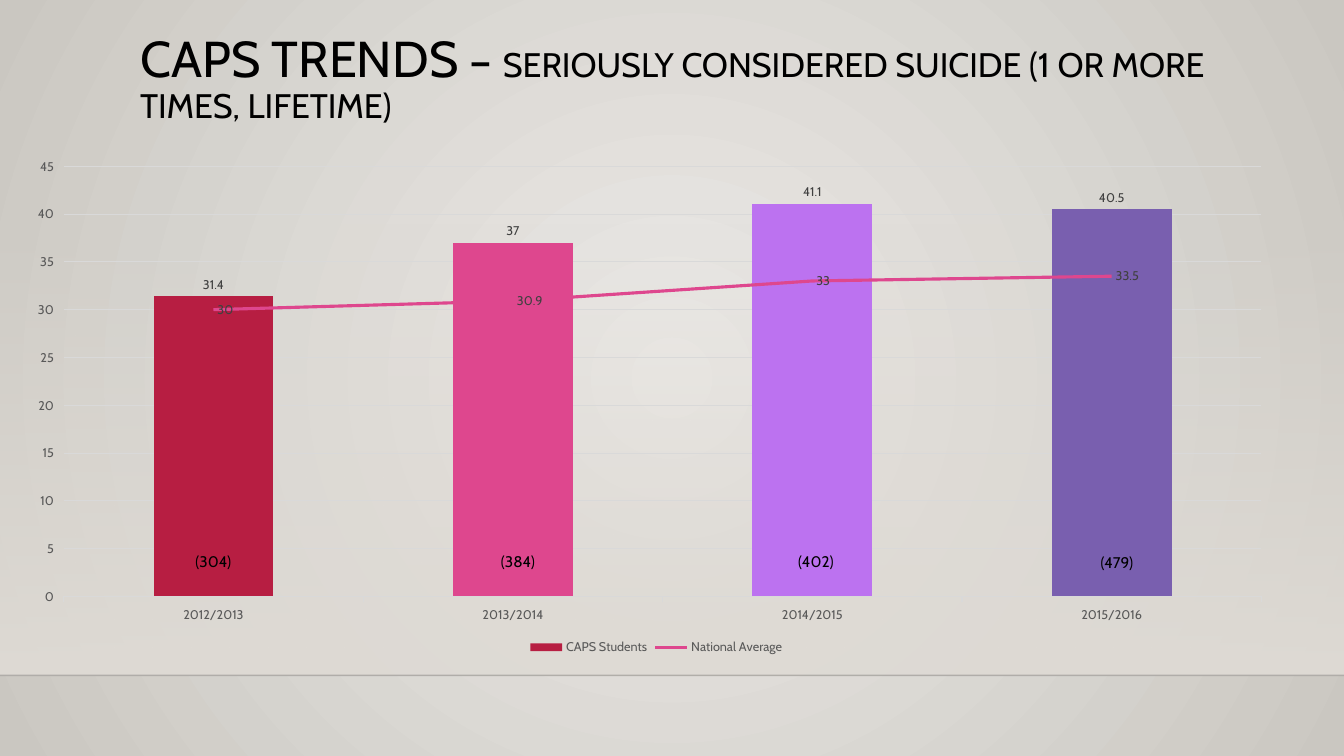
from dataclasses import dataclass

from lxml.etree import SubElement
from pptx import Presentation
from pptx.chart.chart import Chart
from pptx.chart.data import CategoryChartData
from pptx.chart.series import LineSeries
from pptx.dml.color import RGBColor
from pptx.enum.chart import XL_CHART_TYPE as ChartType
from pptx.enum.chart import XL_LABEL_POSITION as LabelPosition
from pptx.enum.chart import XL_LEGEND_POSITION as LegendPosition
from pptx.enum.chart import XL_MARKER_STYLE as MarkerStyle
from pptx.enum.shapes import MSO_CONNECTOR as Connector
from pptx.enum.shapes import MSO_SHAPE as Preset
from pptx.enum.text import MSO_ANCHOR as Anchor
from pptx.enum.text import MSO_AUTO_SIZE as AutoSize
from pptx.enum.text import PP_ALIGN as Align
from pptx.oxml.ns import qn
from pptx.slide import Slide
from pptx.text.text import Font
from pptx.util import Emu, Inches, Pt

CELL = Inches(0.1)  # side of one grid cell
COLUMNS, ROWS = 133.33, 75


@dataclass(frozen=True)
class Theme:
    font: str = "Cabin"
    ink: str = "000000"
    axis_text: str = "595959"
    label_text: str = "404040"
    rule: str = "D9D9D9"
    center: str = "ECEAE7"
    edge: str = "CAC7C1"
    band: str = "DFDBD5"
    horizon: str = "000001"
    bars: tuple[str, ...] = ("B71E42", "DE478E", "BC72F0", "795FAF")
    average: str = "DE478E"
    chart_size: float = 9
    count_size: float = 11


@dataclass(frozen=True)
class Place:
    """A box in grid columns and rows."""
    col: float
    row: float
    cols: float
    rows: float

    def box(self) -> tuple[Emu, ...]:
        return tuple(Emu(round(n * CELL)) for n in (self.col, self.row, self.cols, self.rows))


@dataclass(frozen=True)
class Stop:
    percent: int
    color: str
    opacity: int = 100


@dataclass(frozen=True)
class Year:
    name: str
    caps: float
    national: float
    count: str
    count_place: Place


THEME = Theme()
TITLE = (("CAPS TRENDS ", 36), ("– ", 32.4),
         ("SERIOUSLY CONSIDERED SUICIDE (1 OR MORE TIMES, LIFETIME)", 24.3))
YEARS = (
    Year("2012/2013", 31.4, 30, "(304)", Place(18.4, 54.3, 5.9, 2.9)),
    Year("2013/2014", 37, 30.9, "(384)", Place(48.7, 54.3, 5.5, 2.9)),
    Year("2014/2015", 41.1, 33, "(402)", Place(78.2, 54.3, 5.5, 2.9)),
    Year("2015/2016", 40.5, 33.5, "(479)", Place(108.2, 54.4, 5.9, 2.9)),
)


def rgb(color: str) -> RGBColor:
    return RGBColor.from_string(color)


def style(font: Font, size: float, color: str) -> None:
    font.name, font.size, font.bold = THEME.font, Pt(size), False
    font.color.rgb = rgb(color)


def add_color(parent, stop: Stop) -> None:
    color = SubElement(parent, qn("a:srgbClr"), val=stop.color)
    if stop.opacity < 100:
        SubElement(color, qn("a:alpha"), val=str(stop.opacity * 1000))


def set_gradient(owner, stops: tuple[Stop, ...], circular: bool) -> None:
    gradient = owner.find(".//" + qn("a:gradFill"))
    for child in list(gradient):
        gradient.remove(child)
    stop_list = SubElement(gradient, qn("a:gsLst"))
    for stop in stops:
        add_color(SubElement(stop_list, qn("a:gs"), pos=str(stop.percent * 1000)), stop)
    if circular:
        shade = SubElement(gradient, qn("a:path"), {"path": "circle"})
        SubElement(shade, qn("a:fillToRect"), dict.fromkeys("ltrb", "50000"))
    else:
        SubElement(gradient, qn("a:lin"), ang="5400000", scaled="0")


def draw_backdrop(slide: Slide) -> None:
    slide.background.fill.gradient()
    set_gradient(slide.background._cSld, (Stop(0, THEME.center), Stop(100, THEME.edge)), True)

    # Band that fades in towards the horizon
    band = slide.shapes.add_shape(Preset.RECTANGLE, *Place(0, 22.1, COLUMNS, 44.9).box())
    band.shadow.inherit = False
    band.line.fill.background()
    band.fill.gradient()
    set_gradient(band._element.spPr, (Stop(0, THEME.band, 0), Stop(100, THEME.band)), False)

    left, top, width, _ = Place(0, 67, COLUMNS, 0).box()
    horizon = slide.shapes.add_connector(Connector.STRAIGHT, left, top, left + width, top)
    horizon.line.width = Pt(1)
    horizon.line.fill.solid()
    horizon.line.color.rgb = rgb(THEME.horizon)
    tint = horizon._element.spPr.find(".//" + qn("a:srgbClr"))
    SubElement(tint, qn("a:alpha"), val="20000")
    SubElement(horizon._element.spPr, qn("a:effectLst"))


def split_off_line(chart: Chart) -> LineSeries:
    """Move the last column series to a line plot on the same axes."""
    columns = chart.plots[0]._element
    average = columns.findall(qn("c:ser"))[-1]
    invert = average.find(qn("c:invertIfNegative"))
    if invert is not None:
        average.remove(invert)
    lines = columns.makeelement(qn("c:lineChart"))
    columns.addnext(lines)
    SubElement(lines, qn("c:grouping"), val="standard")
    SubElement(lines, qn("c:varyColors"), val="0")
    lines.append(average)
    SubElement(lines, qn("c:marker"), val="1")
    for axis in columns.findall(qn("c:axId")):
        SubElement(lines, qn("c:axId"), val=axis.get("val"))
    return chart.plots[1].series[0]


def set_plot_area(chart: Chart, x: float, y: float, w: float, h: float) -> None:
    area = chart._chartSpace.chart.plotArea
    layout = area.find(qn("c:layout"))
    if layout is None:
        layout = area.makeelement(qn("c:layout"))
        area.insert(0, layout)
    manual = SubElement(layout, qn("c:manualLayout"))
    for tag, value in (("layoutTarget", "inner"), ("xMode", "edge"), ("yMode", "edge"),
                       ("x", x), ("y", y), ("w", w), ("h", h)):
        SubElement(manual, qn("c:" + tag), val=str(value))


def draw_chart(slide: Slide) -> None:
    data = CategoryChartData()
    data.categories = [year.name for year in YEARS]
    data.add_series("CAPS Students", [year.caps for year in YEARS])
    data.add_series("National Average", [year.national for year in YEARS])
    chart = slide.shapes.add_chart(
        ChartType.COLUMN_CLUSTERED, *Place(1.9, 15.3, 126.4, 50.1).box(), data).chart
    style(chart.font, 10, THEME.ink)
    chart.has_title = False
    average = split_off_line(chart)
    set_plot_area(chart, 0.035, 0.024, 0.94, 0.852)

    # Bars, one colour a year
    bars = chart.plots[0]
    bars.gap_width, bars.vary_by_categories = 150, False
    students = bars.series[0]
    students.format.fill.solid()
    students.format.fill.fore_color.rgb = rgb(THEME.bars[0])
    for index, color in enumerate(THEME.bars):
        fill = students.points[index].format.fill
        fill.solid()
        fill.fore_color.rgb = rgb(color)

    average.smooth = False
    average.marker.style = MarkerStyle.NONE
    average.format.line.width = Pt(2.25)
    average.format.line.color.rgb = rgb(THEME.average)

    for series, position in ((students, LabelPosition.OUTSIDE_END), (average, LabelPosition.RIGHT)):
        labels = series.data_labels
        labels.show_value, labels.position = True, position
        style(labels.font, THEME.chart_size, THEME.label_text)

    # Axes and legend
    years, percent = chart.category_axis, chart.value_axis
    percent.minimum_scale, percent.maximum_scale, percent.major_unit = 0, 45, 5
    percent.format.line.fill.background()
    for line in (years.format.line, percent.major_gridlines.format.line):
        line.width = Pt(0.75)
        line.color.rgb = rgb(THEME.rule)
    chart.has_legend = True
    chart.legend.position, chart.legend.include_in_layout = LegendPosition.BOTTOM, False
    for font in (years.tick_labels.font, percent.tick_labels.font, chart.legend.font):
        style(font, THEME.chart_size, THEME.axis_text)


def write_title(slide: Slide) -> None:
    title = slide.shapes.title
    title.left, title.top, title.width, title.height = Place(12.9, 2.9, 110.9, 9.9).box()
    frame = title.text_frame
    frame.auto_size, frame.word_wrap, frame.vertical_anchor = AutoSize.NONE, True, Anchor.TOP
    heading = frame.paragraphs[0]
    heading.alignment, heading.line_spacing = Align.LEFT, 0.9
    for text, size in TITLE:
        run = heading.add_run()
        run.text = text
        style(run.font, size, THEME.ink)


def write_count(slide: Slide, year: Year) -> None:
    frame = slide.shapes.add_textbox(*year.count_place.box()).text_frame
    frame.word_wrap, frame.auto_size = True, AutoSize.SHAPE_TO_FIT_TEXT
    frame.text = year.count
    style(frame.paragraphs[0].font, THEME.count_size, THEME.ink)


def main() -> None:
    deck = Presentation()
    deck.slide_width, deck.slide_height = round(COLUMNS * CELL), ROWS * CELL
    slide = deck.slides.add_slide(deck.slide_layouts[5])
    draw_backdrop(slide)
    draw_chart(slide)
    write_title(slide)
    for year in YEARS:
        write_count(slide, year)
    deck.save("out.pptx")


if __name__ == "__main__":
    main()
